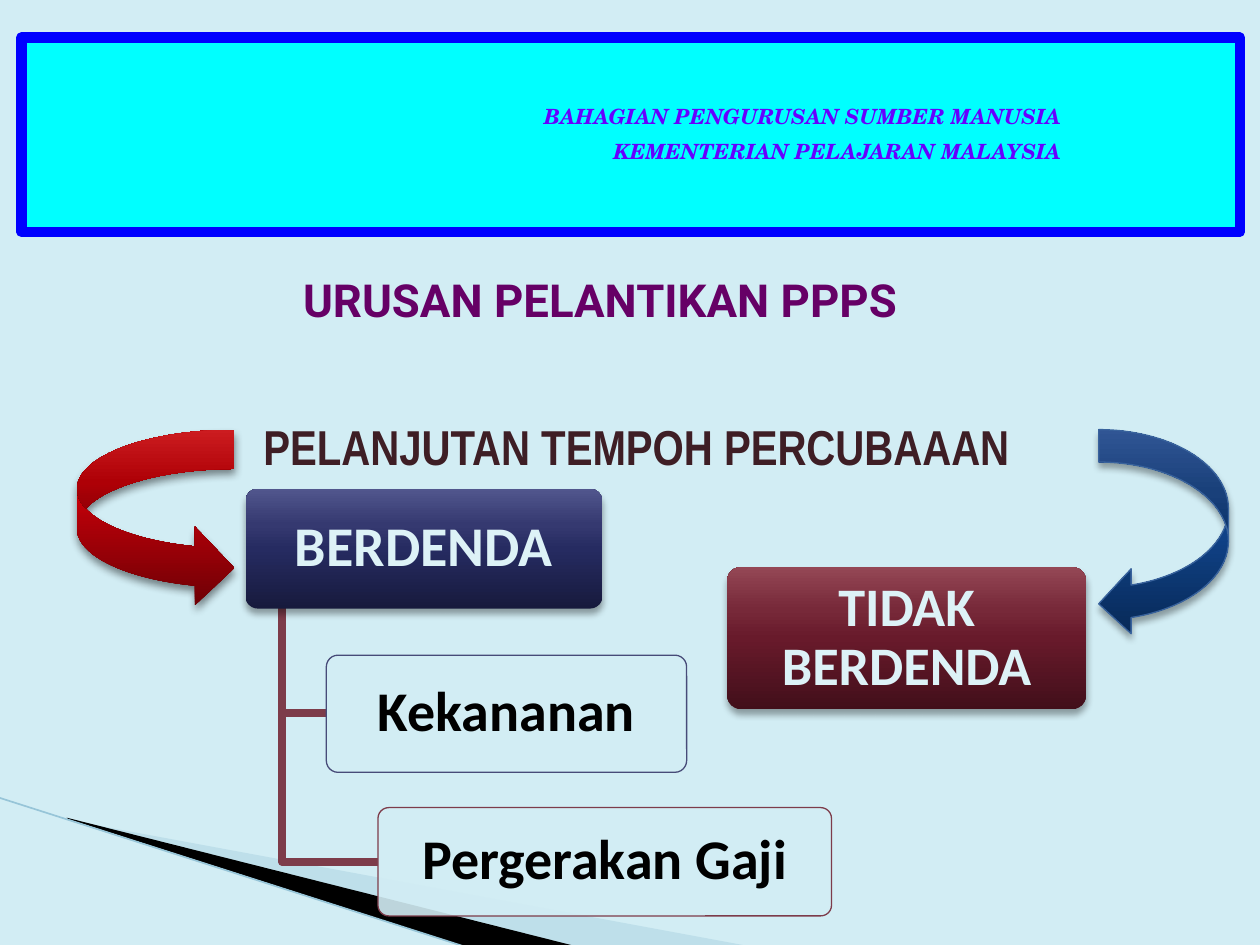
"""Build the slide on extending the probation period, with and without penalty."""
from lxml import etree
from pptx import Presentation
from pptx.dml.color import RGBColor
from pptx.enum.shapes import MSO_CONNECTOR, MSO_SHAPE
from pptx.enum.text import MSO_ANCHOR, PP_ALIGN
from pptx.oxml import parse_xml
from pptx.oxml.ns import nsdecls, qn
from pptx.util import Inches, Pt

HUES = {
    "back": "D2EDF4", "haze": "A0CBDC", "black": "000000", "rim": "97C5D8",
    "cyan": "00FFFF", "blue": "0000FF", "violet": "6600FF", "plum": "660066",
    "brown": "3E1E25", "pale": "DDF2F7", "wine": "7D3C4A", "slate": "474B78",
    "steel": "39639D",
}
FADES = {
    "navy": ["171A3D", "262B61", "353970", "51568D"],
    "maroon": ["420F1A", "681A2B", "772939", "944755"],
    "ocean": ["072956", "104288", "205199", "3D6BB9"],
    "red": ["6D0005", "B00008", "DA0008", "FF2429"],
}


def paint(shape, fill=None, alpha=None, line=None, width=0.75, shade=None):
    """Set fill, line and shadow of a shape."""
    shape.shadow.inherit = False
    if fill in FADES:
        stops = "".join(f'<a:gs pos="{at}000"><a:srgbClr val="{hue}"/></a:gs>'
                        for at, hue in zip((0, 50, 70, 100), FADES[fill]))
        shape.fill.gradient()
        grad = shape._element.spPr.find(qn("a:gradFill"))
        grad.replace(grad.find(qn("a:gsLst")),
                     parse_xml(f'<a:gsLst {nsdecls("a")}>{stops}</a:gsLst>'))
        shape.fill.gradient_angle = 90
    elif fill:
        shape.fill.solid()
        shape.fill.fore_color.rgb = RGBColor.from_string(HUES[fill])
        if alpha:
            tint = shape._element.spPr.find(qn("a:solidFill"))[0]
            etree.SubElement(tint, qn("a:alpha"), val=f"{alpha}000")
    else:
        shape.fill.background()
    if line:
        shape.line.color.rgb = RGBColor.from_string(HUES[line])
        shape.line.width = Pt(width)
    else:
        shape.line.fill.background()
    if shade:
        alpha, blur, dist = shade
        shape._element.spPr.find(qn("a:effectLst")).append(parse_xml(
            f'<a:outerShdw {nsdecls("a")} blurRad="{Pt(blur)}" dist="{Pt(dist)}" '
            f'dir="5400000" rotWithShape="0"><a:srgbClr val="000000">'
            f'<a:alpha val="{alpha}000"/></a:srgbClr></a:outerShdw>'))


def write(shape, lines, hue, align=PP_ALIGN.CENTER, anchor=MSO_ANCHOR.TOP, space=1, **font):
    """Put bold lines of text into a shape."""
    frame = shape.text_frame
    frame.word_wrap = True
    frame.vertical_anchor = anchor
    frame.text = "\n".join(lines)
    for index, para in enumerate(frame.paragraphs):
        para.alignment = align
        para.line_spacing = space
        para.space_before = Pt(6 if index else 0)
        para.font.color.rgb = RGBColor.from_string(HUES[hue])
        for key, value in {"bold": True, **font}.items():
            setattr(para.font, key, value)


deck = Presentation()
deck.slide_width, deck.slide_height = Inches(10), Inches(7.5)
slide = deck.slides.add_slide(deck.slide_layouts[5])
shapes = slide.shapes
slide.background.fill.solid()
slide.background.fill.fore_color.rgb = RGBColor.from_string(HUES["back"])

title = shapes.title
title.left, title.top, title.width, title.height = map(Inches, (0, 2.11, 9.53, 0.54))
write(title, ["URUSAN PELANTIKAN PPPS"], "plum", size=Pt(26), name="Roboto")

wedges = [
    ([(0.55, 6.51), (5.95, 7.51), (4.56, 7.51), (0.55, 6.5)], "haze", 40),
    ([(0.53, 6.49), (4.57, 7.51), (3.72, 7.52), (0.54, 6.5)], "black", None),
]
for points, hue, alpha in wedges:
    spots = [(Inches(x), Inches(y)) for x, y in points]
    path = shapes.build_freeform(*spots[0])
    path.add_line_segments(spots[1:], close=True)
    paint(path.convert_to_shape(), hue, alpha)

edge = shapes.add_connector(MSO_CONNECTOR.STRAIGHT, Inches(-0.01), Inches(6.33),
                            Inches(3.71), Inches(7.52))
edge.line.color.rgb = RGBColor.from_string(HUES["rim"])
edge.line.width = Pt(0.95)
etree.SubElement(edge._element.spPr, qn("a:effectLst"))

banner = shapes.add_shape(MSO_SHAPE.RECTANGLE, *map(Inches, (0.17, 0.3, 9.67, 1.54)))
paint(banner, "cyan", line="blue", width=6)
office = shapes.add_textbox(*map(Inches, (3.53, 0.77, 5.04, 0.62)))
write(office, ["BAHAGIAN PENGURUSAN SUMBER MANUSIA ", "KEMENTERIAN PELAJARAN MALAYSIA "],
      "violet", PP_ALIGN.RIGHT, size=Pt(12), name="TeX Gyre Schola", italic=True)
topic = shapes.add_textbox(*map(Inches, (0.51, 3.26, 9.08, 0.57)))
write(topic, ["PELANJUTAN TEMPOH PERCUBAAAN"], "brown", size=Pt(28), name="Arial Narrow")

for right, down in [(2.59, 5.66), (3, 6.84)]:
    path = shapes.build_freeform(Inches(2.24), Inches(4.82))
    path.add_line_segments([(Inches(2.24), Inches(down)), (Inches(right), Inches(down))],
                           close=False)
    paint(path.convert_to_shape(), line="wine", width=4.33)

soft = (35, 4, 3)
boxes = [
    ("BERDENDA", (1.95, 3.88, 2.83, 0.95), "pale", 32, {"fill": "navy", "shade": soft}),
    ("Kekananan", (2.59, 5.2, 2.86, 0.93), "black", 32,
     {"fill": "back", "alpha": 90, "line": "slate"}),
    ("Pergerakan Gaji", (3, 6.41, 3.6, 0.86), "black", 32,
     {"fill": "back", "alpha": 90, "line": "wine"}),
    ("TIDAK BERDENDA", (5.77, 4.5, 2.85, 1.13), "pale", 31,
     {"fill": "maroon", "shade": soft}),
]
for text, place, hue, size, look in boxes:
    box = shapes.add_shape(MSO_SHAPE.ROUNDED_RECTANGLE, *map(Inches, place))
    box.adjustments[0] = 0.1
    paint(box, **look)
    for side, inset in {"left": 0.07, "right": 0.07, "top": 0.04, "bottom": 0.04}.items():
        setattr(box.text_frame, f"margin_{side}", Inches(inset))
    write(box, [text], hue, anchor=MSO_ANCHOR.MIDDLE, space=0.9, size=Pt(size), name="Calibri")

arrows = [
    (MSO_SHAPE.CURVED_LEFT_ARROW, (8.72, 3.41, 1.03, 1.64),
     {"fill": "ocean", "line": "steel", "shade": soft}),
    (MSO_SHAPE.CURVED_RIGHT_ARROW, (0.61, 3.41, 1.25, 1.41),
     {"fill": "red", "shade": (45, 5, 3)}),
]
for kind, place, look in arrows:
    paint(shapes.add_shape(kind, *map(Inches, place)), **look)

deck.save("out.pptx")
